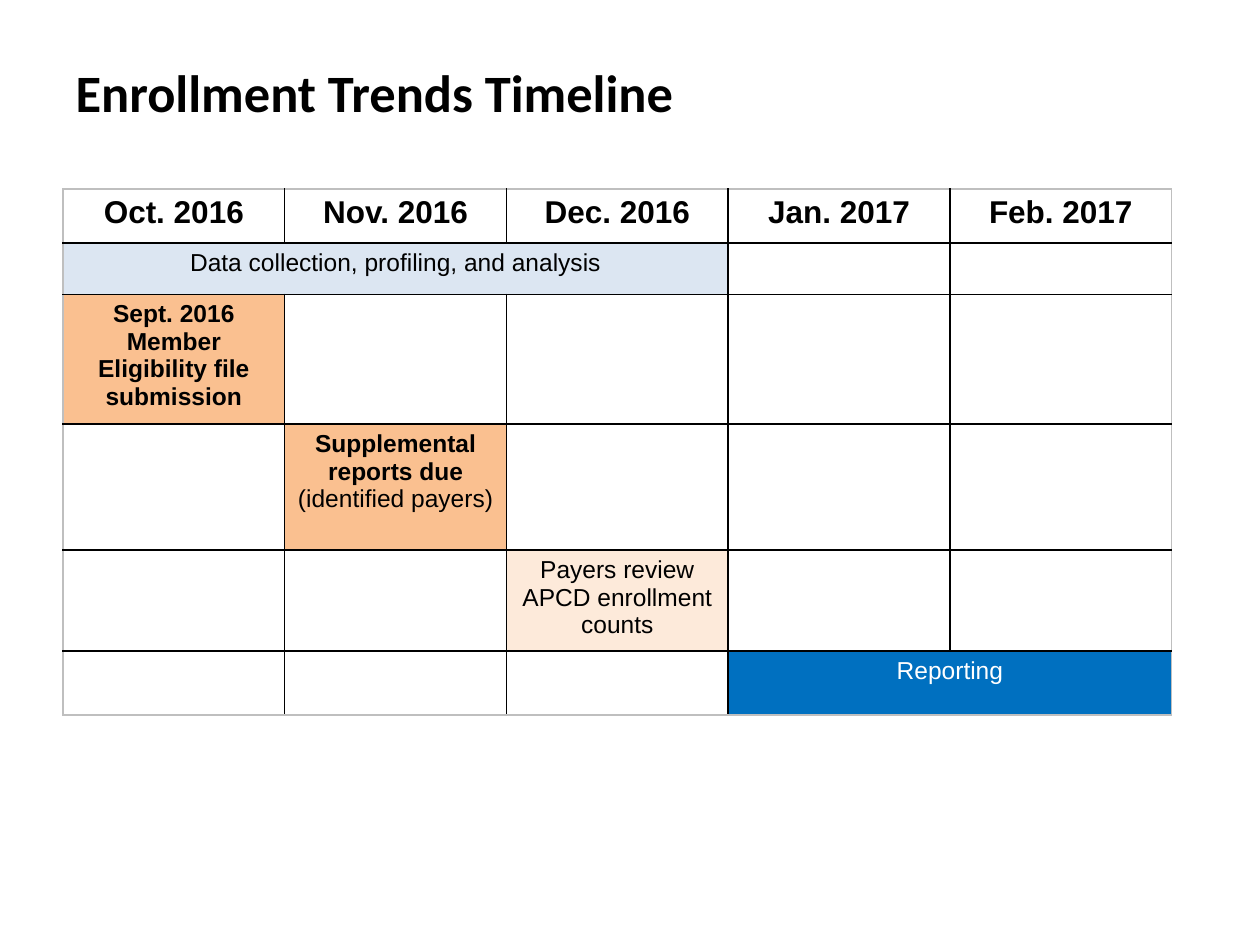
import dataclasses

import pptx
import pptx.dml.color
import pptx.enum.text
import pptx.oxml
import pptx.oxml.ns
import pptx.util

Inches = pptx.util.Inches
Pt = pptx.util.Pt


@dataclasses.dataclass(frozen=True)
class Theme:
    """Colours, fonts and type sizes of the slide."""
    black: str = "000000"
    white: str = "FFFFFF"
    frame: str = "BFBFBF"
    analysis: str = "DCE6F2"
    due: str = "FAC090"
    review: str = "FDEADA"
    reporting: str = "0070C0"
    title_font: str = "Calibri"
    body_font: str = "Arial"
    title_size: int = 30
    head_size: int = 18
    body_size: int = 14


THEME = Theme()
MONTHS = ["Oct. 2016", "Nov. 2016", "Dec. 2016", "Jan. 2017", "Feb. 2017"]
ROW_HEIGHTS = [0.43, 0.4, 1.03, 1, 0.8, 0.51]
COL_WIDTH = 1.76


@dataclasses.dataclass(frozen=True)
class Task:
    """A bar of the timeline: bold text, then plain text."""
    row: int
    col: int
    span: int
    bold: str
    plain: str
    fill: str
    color: str = THEME.black


TASKS = [
    Task(1, 0, 3, "", "Data collection, profiling, and analysis", THEME.analysis),
    Task(2, 0, 1, "Sept. 2016 Member Eligibility file submission", "", THEME.due),
    Task(3, 1, 1, "Supplemental reports due ", "(identified payers)", THEME.due),
    Task(4, 2, 1, "", "Payers review APCD enrollment counts", THEME.review),
    Task(5, 3, 2, "", "Reporting", THEME.reporting, THEME.white),
]


def rgb(color):
    """Return an RGBColor for a hex string."""
    return pptx.dml.color.RGBColor.from_string(color)


def style_font(font, name, size, color):
    """Set the typeface, size and colour of a font."""
    font.name = name
    font.size = Pt(size)
    font.color.rgb = rgb(color)


def set_borders(cell, colors):
    """Draw the left, right, top and bottom borders of a cell."""
    tc_pr = cell._tc.get_or_add_tcPr()
    for side, color in zip("LRTB", colors):
        tc_pr.append(pptx.oxml.parse_xml(
            f'<a:ln{side} {pptx.oxml.ns.nsdecls("a")} w="{Pt(1)}"><a:solidFill>'
            f'<a:srgbClr val="{color}"/></a:solidFill></a:ln{side}>'))


def write_cell(cell, bold, plain, size, color):
    """Write centred text into a cell, bold part first."""
    p = cell.text_frame.paragraphs[0]
    p.alignment = pptx.enum.text.PP_ALIGN.CENTER
    style_font(p.font, THEME.body_font, size, color)
    for text, is_bold in ((bold, True), (plain, False)):
        if text:
            r = p.add_run()
            r.text = text
            r.font.bold = is_bold


def add_title(s, text):
    """Fill and place the title placeholder."""
    sp = s.shapes.title
    sp.left, sp.top, sp.width, sp.height = map(Inches, (0.5, 0.42, 8.5, 0.61))
    tf = sp.text_frame
    tf.text = text
    tf.vertical_anchor = pptx.enum.text.MSO_ANCHOR.MIDDLE
    p = tf.paragraphs[0]
    p.alignment = pptx.enum.text.PP_ALIGN.LEFT
    p.font.bold = True
    style_font(p.font, THEME.title_font, THEME.title_size, THEME.black)


def add_grid(s):
    """Add the empty timeline table with a grey frame and black inner lines."""
    rows, cols = len(ROW_HEIGHTS), len(MONTHS)
    table = s.shapes.add_table(rows, cols, Inches(0.5), Inches(1.5),
                               Inches(COL_WIDTH * cols),
                               Inches(sum(ROW_HEIGHTS))).table
    table.first_row = table.horz_banding = False
    for column in table.columns:
        column.width = Inches(COL_WIDTH)
    for row, height in zip(table.rows, ROW_HEIGHTS):
        row.height = Inches(height)
    for task in TASKS:
        if task.span > 1:
            end = table.cell(task.row, task.col + task.span - 1)
            table.cell(task.row, task.col).merge(end)
    for i in range(rows):
        for j in range(cols):
            cell = table.cell(i, j)
            last = j + cell.span_width if cell.is_merge_origin else j + 1
            edges = (j == 0, last == cols, i == 0, i == rows - 1)
            set_borders(cell, [THEME.frame if e else THEME.black for e in edges])
            cell.fill.background()
    return table


def add_tasks(table):
    """Write the months and the coloured tasks into the table."""
    for j, month in enumerate(MONTHS):
        write_cell(table.cell(0, j), month, "", THEME.head_size, THEME.black)
    for task in TASKS:
        cell = table.cell(task.row, task.col)
        write_cell(cell, task.bold, task.plain, THEME.body_size, task.color)
        cell.fill.solid()
        cell.fill.fore_color.rgb = rgb(task.fill)


def main():
    """Build and save the slide."""
    prs = pptx.Presentation()
    prs.slide_width, prs.slide_height = Inches(10), Inches(7.5)
    s = prs.slides.add_slide(prs.slide_layouts[5])
    add_title(s, "Enrollment Trends Timeline")
    add_tasks(add_grid(s))
    prs.save("out.pptx")


if __name__ == "__main__":
    main()
